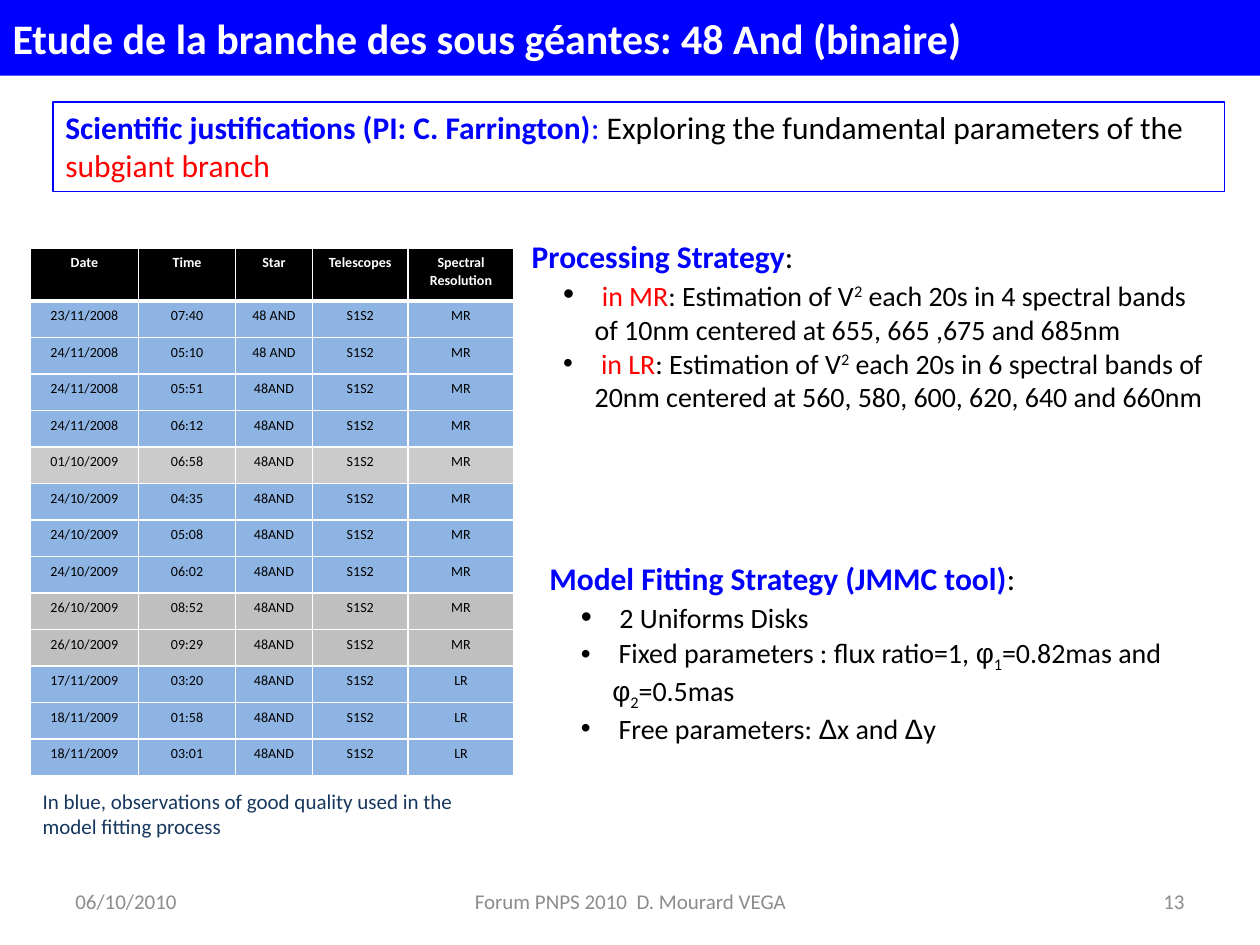
from dataclasses import dataclass

from lxml.etree import SubElement
from pptx import Presentation
from pptx.dml.color import RGBColor
from pptx.enum.shapes import MSO_SHAPE
from pptx.enum.text import MSO_ANCHOR, MSO_AUTO_SIZE, PP_ALIGN
from pptx.oxml.ns import qn
from pptx.util import Inches, Pt


@dataclass(frozen=True)
class Theme:
    font: str = "Calibri"
    symbol_font: str = "Arial"
    accent: str = "0000FF"
    highlight: str = "FF0000"
    text: str = "000000"
    white: str = "FFFFFF"
    caption: str = "17375E"
    footer: str = "8C8C8C"
    good: str = "8EB4E3"
    light_grey: str = "CBCBCB"
    grey: str = "BFBFBF"
    title_size: float = 24
    heading_size: float = 18
    body_size: float = 16
    note_size: float = 12
    table_size: float = 8


T = Theme()
HEADERS = ["Date", "Time", "Star", "Telescopes", "Spectral Resolution"]
COLUMN_WIDTHS = [0.86, 0.77, 0.61, 0.76, 0.84]
HEADER_HEIGHT, ROW_HEIGHT = 0.42, 0.29
OBSERVATIONS = [
    ("23/11/2008", "07:40", "48 AND", "MR", T.good),
    ("24/11/2008", "05:10", "48 AND", "MR", T.good),
    ("24/11/2008", "05:51", "48AND", "MR", T.good),
    ("24/11/2008", "06:12", "48AND", "MR", T.good),
    ("01/10/2009", "06:58", "48AND", "MR", T.light_grey),
    ("24/10/2009", "04:35", "48AND", "MR", T.good),
    ("24/10/2009", "05:08", "48AND", "MR", T.good),
    ("24/10/2009", "06:02", "48AND", "MR", T.good),
    ("26/10/2009", "08:52", "48AND", "MR", T.grey),
    ("26/10/2009", "09:29", "48AND", "MR", T.grey),
    ("17/11/2009", "03:20", "48AND", "LR", T.good),
    ("18/11/2009", "01:58", "48AND", "LR", T.good),
    ("18/11/2009", "03:01", "48AND", "LR", T.good),
]
RED = {"color": T.highlight}
LEAD = (" ", {"size": T.heading_size})
SUPER = {"baseline": 30000}
SUB = {"baseline": -25000}
SYMBOL = {"font": T.symbol_font}
PROCESSING = [
    [LEAD, ("in MR", RED), (": Estimation of V", {}), ("2", SUPER),
     (" each 20s in 4 spectral bands of 10nm centered at 655, 665 ,675 and 685nm", {})],
    [(" ", {}), ("in LR", RED), (": Estimation of V", {}), ("2", SUPER),
     (" each 20s in 6 spectral bands of 20nm centered at 560, 580, 600, 620, 640 and 660nm", {})],
]
FITTING = [
    [LEAD, ("2 Uniforms Disks", {})],
    [(" Fixed parameters : flux ratio=1, ", {}), ("φ", SYMBOL), ("1", SUB),
     ("=0.82mas and ", {}), ("φ", SYMBOL), ("2", SUB), ("=0.5mas", {})],
    [(" Free parameters: ", {}), ("Δ", SYMBOL), ("x and ", {}), ("Δ", SYMBOL), ("y", {})],
]


def rgb(value):
    return RGBColor.from_string(value)


def add_run(p, text, size=T.body_size, color=T.text, bold=False, font=T.font, baseline=None):
    r = p.add_run()
    r.text = text
    r.font.size, r.font.bold, r.font.name = Pt(size), bold, font
    r.font.color.rgb = rgb(color)
    if baseline is not None:
        r.font._element.set("baseline", str(baseline))


def place(sp, box):
    sp.left, sp.top, sp.width, sp.height = map(Inches, box)


def set_bullet(p, char=None):
    p.space_before = Pt(0)
    pPr = p._p.get_or_add_pPr()
    pPr.set("marL", str(Inches(0.5 if char else 0)))
    pPr.set("indent", str(Inches(-0.25 if char else 0)))
    if char:
        SubElement(pPr, qn("a:buFont"), typeface=T.symbol_font)
        SubElement(pPr, qn("a:buChar"), char=char)
    else:
        SubElement(pPr, qn("a:buNone"))


def title_bar(sp, box, text):
    place(sp, box)
    sp.fill.solid()
    sp.fill.fore_color.rgb = rgb(T.accent)
    tf = sp.text_frame
    tf.vertical_anchor = MSO_ANCHOR.MIDDLE
    tf.auto_size = MSO_AUTO_SIZE.NONE
    p = tf.paragraphs[0]
    p.alignment = PP_ALIGN.LEFT
    add_run(p, text, T.title_size, T.white, True)


def justification(s, box):
    sp = s.shapes.add_shape(MSO_SHAPE.RECTANGLE, *map(Inches, box))
    sp.shadow.inherit = False
    sp.fill.background()
    sp.line.color.rgb = rgb(T.accent)
    sp.line.width = Pt(0.75)
    tf = sp.text_frame
    tf.word_wrap = True
    tf.vertical_anchor = MSO_ANCHOR.TOP
    p = tf.paragraphs[0]
    p.alignment = PP_ALIGN.LEFT
    size = T.heading_size
    add_run(p, "Scientific justifications (PI: C. Farrington)", size, T.accent, True)
    add_run(p, ": ", size, T.accent)
    add_run(p, "Exploring the fundamental parameters of the ", size)
    add_run(p, "subgiant branch", size, T.highlight)


def strategy(sp, box, heading, items):
    place(sp, box)
    tf = sp.text_frame
    tf.auto_size = MSO_AUTO_SIZE.NONE
    p = tf.paragraphs[0]
    set_bullet(p)
    add_run(p, heading, T.heading_size, T.accent, True)
    add_run(p, ":", T.heading_size)
    for item in items:
        p = tf.add_paragraph()
        p.level = 1
        set_bullet(p, "•")
        for text, style in item:
            add_run(p, text, **style)


def fill_cell(cell, text, fill, color, bold, top, bottom):
    p = cell.text_frame.paragraphs[0]
    p.alignment = PP_ALIGN.CENTER
    add_run(p, text, T.table_size, color, bold)
    tcPr = cell._tc.get_or_add_tcPr()
    for side, width in (("L", 1), ("R", 1), ("T", top), ("B", bottom)):
        ln = SubElement(tcPr, qn(f"a:ln{side}"), w=str(Pt(width)))
        SubElement(SubElement(ln, qn("a:solidFill")), qn("a:srgbClr"), val=T.white)
    cell.fill.solid()
    cell.fill.fore_color.rgb = rgb(fill)


def observation_table(s, box):
    shape = s.shapes.add_table(len(OBSERVATIONS) + 1, len(HEADERS), *map(Inches, box))
    table = shape.table
    for column, width in zip(table.columns, COLUMN_WIDTHS):
        column.width = Inches(width)
    for i, row in enumerate(table.rows):
        row.height = Inches(ROW_HEIGHT if i else HEADER_HEIGHT)
    for cell, text in zip(table.rows[0].cells, HEADERS):
        fill_cell(cell, text, T.text, T.white, True, 1, 3)
    for i, (date, time, star, resolution, fill) in enumerate(OBSERVATIONS, 1):
        for cell, text in zip(table.rows[i].cells, (date, time, star, "S1S2", resolution)):
            fill_cell(cell, text, fill, T.text, False, 3 if i == 1 else 1, 1)


def note(s, box, text, color, align=PP_ALIGN.LEFT, anchor=MSO_ANCHOR.TOP):
    tf = s.shapes.add_textbox(*map(Inches, box)).text_frame
    tf.word_wrap = True
    tf.vertical_anchor = anchor
    p = tf.paragraphs[0]
    p.alignment = align
    add_run(p, text, T.note_size, color)


def footer(s, top, height):
    for left, width, text, align in (
        (0.5, 2.33, "06/10/2010", PP_ALIGN.LEFT),
        (3.42, 3.17, "Forum PNPS 2010  D. Mourard VEGA", PP_ALIGN.CENTER),
        (7.17, 2.33, "13", PP_ALIGN.RIGHT),
    ):
        note(s, (left, top, width, height), text, T.footer, align, MSO_ANCHOR.MIDDLE)


def main():
    prs = Presentation()
    prs.slide_width, prs.slide_height = Inches(10), Inches(7.5)
    s = prs.slides.add_slide(prs.slide_layouts[3])
    title, processing, fitting = s.placeholders
    title_bar(title, (0, 0, 10, 0.6), "Etude de la branche des sous géantes: 48 And (binaire)")
    justification(s, (0.42, 0.81, 9.3, 0.71))
    observation_table(s, (0.24, 1.97, 3.85, 4.19))
    strategy(processing, (4.12, 1.83, 5.58, 1.78), "Processing Strategy", PROCESSING)
    strategy(fitting, (4.26, 4.39, 5.45, 1.51), "Model Fitting Strategy (JMMC tool)", FITTING)
    note(s, (0.24, 6.21, 3.85, 0.51),
         "In blue, observations of good quality used in the model fitting process", T.caption)
    footer(s, 6.95, 0.4)
    prs.save("out.pptx")


if __name__ == "__main__":
    main()
